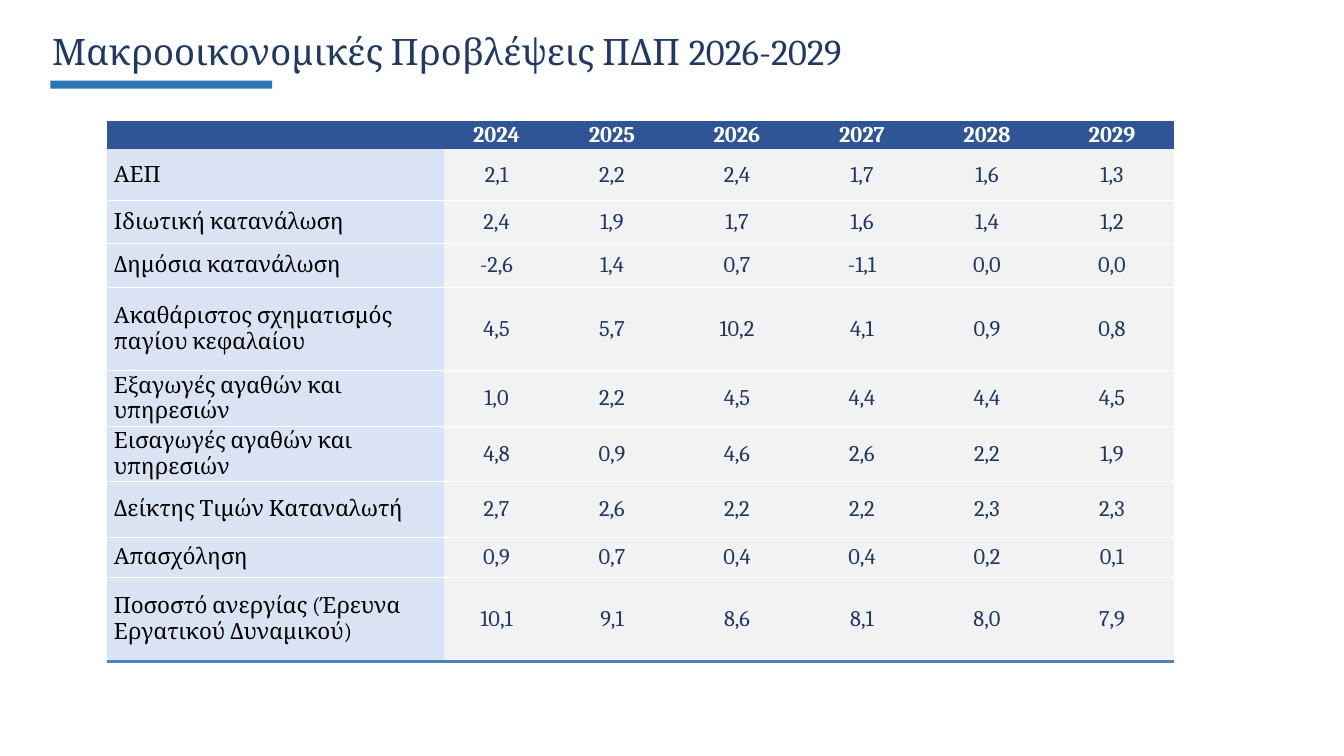
from lxml.etree import SubElement
from pptx import Presentation
from pptx.dml.color import RGBColor
from pptx.enum.shapes import MSO_SHAPE
from pptx.enum.text import MSO_ANCHOR, PP_ALIGN
from pptx.oxml import parse_xml
from pptx.oxml.ns import qn
from pptx.util import Pt

PX = 9144
NS = "http://schemas.openxmlformats.org/drawingml/2006/main"
FACE = "Cambria"
PLAIN = "{2D5ABB26-0587-4C30-8999-92F81FD0307C}"
COLORS = {
    "navy": "203864", "bar": "2E75B6", "head": "2F5597", "label": "DAE3F3",
    "value": "F2F2F2", "rule": "FFFFFF", "end": "4F81BD",
    "white": "FFFFFF", "black": "000000",
}
YEARS = ["", "2024", "2025", "2026", "2027", "2028", "2029"]
ROWS = [
    (51, "ΑΕΠ", "2,1 2,2 2,4 1,7 1,6 1,3"),
    (43, "Ιδιωτική κατανάλωση", "2,4 1,9 1,7 1,6 1,4 1,2"),
    (43, "Δημόσια κατανάλωση", "-2,6 1,4 0,7 -1,1 0,0 0,0"),
    (83, "Ακαθάριστος σχηματισμός παγίου κεφαλαίου", "4,5 5,7 10,2 4,1 0,9 0,8"),
    (55, "Εξαγωγές αγαθών και υπηρεσιών", "1,0 2,2 4,5 4,4 4,4 4,5"),
    (55, "Εισαγωγές αγαθών και υπηρεσιών", "4,8 0,9 4,6 2,6 2,2 1,9"),
    (55, "Δείκτης Τιμών Καταναλωτή", "2,7 2,6 2,2 2,2 2,3 2,3"),
    (40, "Απασχόληση", "0,9 0,7 0,4 0,4 0,2 0,1"),
    (83, "Ποσοστό ανεργίας (Έρευνα Εργατικού Δυναμικού)", "10,1 9,1 8,6 8,1 8,0 7,9"),
]
WIDTHS = [334, 105] + [124] * 5
HEIGHTS = [28] + [row[0] for row in ROWS]


def style(par, size, color, bold=False):
    for run in par.runs:
        run.font.name = FACE
        run.font.size = Pt(size)
        run.font.bold = bold
        run.font.color.rgb = RGBColor.from_string(COLORS[color])


def border(cell, side, width, color):
    return parse_xml(
        f'<a:{side} xmlns:a="{NS}" w="{Pt(width)}"><a:solidFill>'
        f'<a:srgbClr val="{COLORS[color]}"/></a:solidFill></a:{side}>'
    )


deck = Presentation()
deck.slide_width = 1333 * PX
deck.slide_height = 750 * PX
slide = deck.slides.add_slide(deck.slide_layouts[6])

title = slide.shapes.add_textbox(42 * PX, 24 * PX, 1244 * PX, 54 * PX)
title.text_frame.word_wrap = True
title.text_frame.text = "Μακροοικονομικές Προβλέψεις ΠΔΠ 2026-2029"
style(title.text_frame.paragraphs[0], 26, "navy")

bar = slide.shapes.add_shape(MSO_SHAPE.RECTANGLE, 50 * PX, 80 * PX, 220 * PX, 8 * PX)
bar.shadow.inherit = False
bar.fill.solid()
bar.fill.fore_color.rgb = RGBColor.from_string(COLORS["bar"])
bar.line.fill.background()

frame = slide.shapes.add_table(
    len(HEIGHTS), len(WIDTHS), 106 * PX, 120 * PX, sum(WIDTHS) * PX, sum(HEIGHTS) * PX
)
table = frame.table
table.horz_banding = False
table._tbl.tblPr.find(qn("a:tableStyleId")).text = PLAIN
for col, width in zip(table.columns, WIDTHS):
    col.width = width * PX
for row, height in zip(table.rows, HEIGHTS):
    row.height = height * PX

grid = [YEARS] + [[label] + values.split() for _, label, values in ROWS]
last = len(grid) - 1
for r, line in enumerate(grid):
    for c, text in enumerate(line):
        if r == 0:
            fill, ink = "head", "white"
        elif c == 0:
            fill, ink = "label", "black"
        else:
            fill, ink = "value", "navy"
        cell = table.cell(r, c)
        cell.margin_left = cell.margin_right = 7 * PX
        cell.margin_top = cell.margin_bottom = 0
        cell.vertical_anchor = MSO_ANCHOR.MIDDLE
        cell.fill.solid()
        cell.fill.fore_color.rgb = RGBColor.from_string(COLORS[fill])
        par = cell.text_frame.paragraphs[0]
        par.space_before = par.space_after = Pt(2.4)
        par.alignment = PP_ALIGN.CENTER if c else PP_ALIGN.LEFT
        if text:
            par.text = text
            style(par, 16, ink, bold=r == 0)
        else:
            SubElement(par._p, qn("a:endParaRPr"), sz="1600")
        if r:
            edge = (2.25, "end") if r == last else (1, "rule")
            props = cell._tc.get_or_add_tcPr()
            props.insert(0, border(cell, "lnB", *edge))
            if r > 1:
                props.insert(0, border(cell, "lnT", 1, "rule"))

deck.save("out.pptx")
